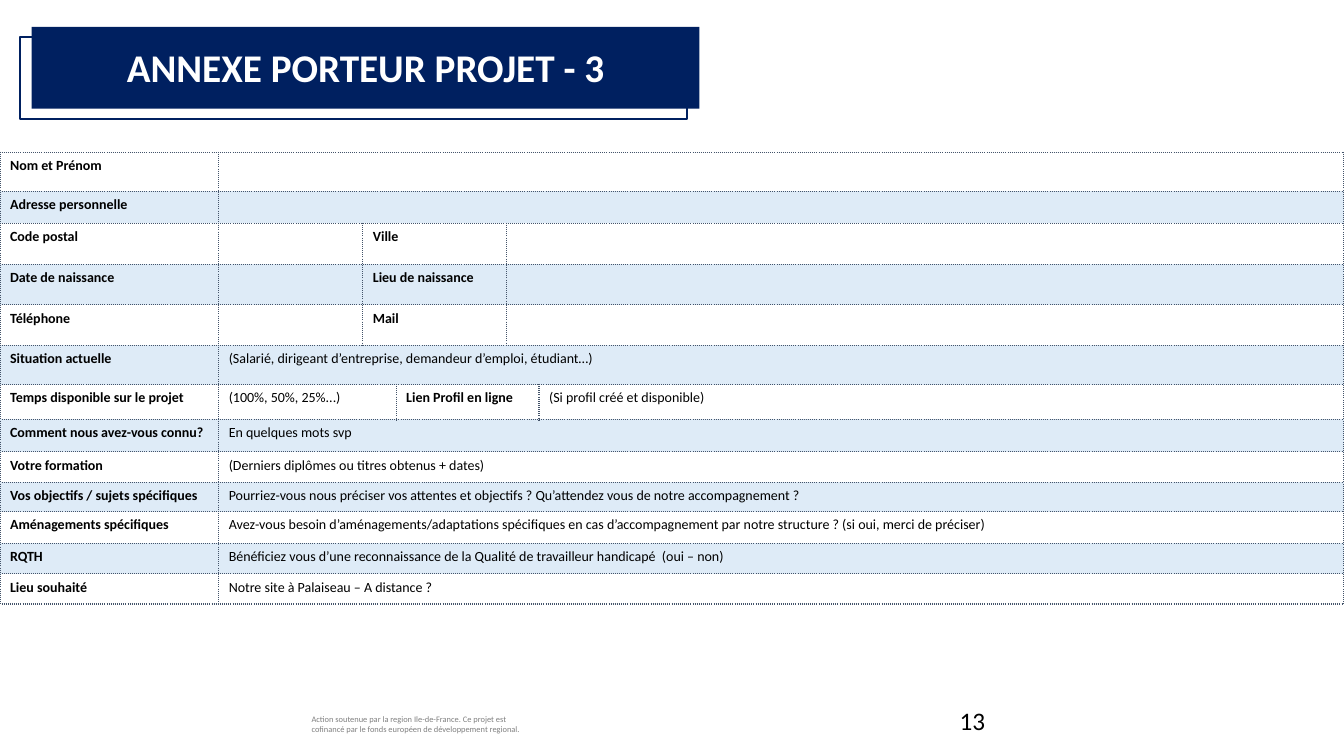
from lxml import etree
from pptx import Presentation
from pptx.dml.color import RGBColor
from pptx.enum import shapes, text
from pptx.oxml import ns
from pptx.util import Cm, Pt

NAVY = RGBColor(0x00, 0x20, 0x60)
PALE_BLUE = RGBColor(0xDE, 0xEB, 0xF7)
BORDER = RGBColor(0x44, 0x54, 0x6A)
GREY = RGBColor(0x80, 0x80, 0x80)
BLACK = RGBColor(0, 0, 0)
WHITE = RGBColor(255, 255, 255)

TITLE = "ANNEXE PORTEUR PROJET - 3"
FOOTER = ("Action soutenue par la region Ile-de-France. Ce projet est cofinancé "
          "par le fonds européen de développement regional.")
PAGE_NUMBER = "13"

WIDE = (1, 5)
PAIRS = (1, 1, 2, 2)
PROFILE = (1, 2, 2, 1)
FORM = [
    (0.98, WIDE, ["Nom et Prénom", ""]),
    (0.81, WIDE, ["Adresse personnelle", ""]),
    (1.03, PAIRS, ["Code postal", "", "Ville", ""]),
    (1.02, PAIRS, ["Date de naissance", "", "Lieu de naissance", ""]),
    (1.02, PAIRS, ["Téléphone", "", "Mail", ""]),
    (0.99, WIDE, ["Situation actuelle",
                  "(Salarié, dirigeant d’entreprise, demandeur d’emploi, étudiant…)"]),
    (0.88, PROFILE, ["Temps disponible sur le projet", "(100%, 50%, 25%...)",
                     "Lien Profil en ligne", "(Si profil créé et disponible)"]),
    (0.81, WIDE, ["Comment nous avez-vous connu?", "En quelques mots svp"]),
    (0.77, WIDE, ["Votre formation", "(Derniers diplômes ou titres obtenus + dates)"]),
    (0.74, WIDE, ["Vos objectifs / sujets spécifiques",
                  "Pourriez-vous nous préciser vos attentes et objectifs ? "
                  "Qu’attendez vous de notre accompagnement ?"]),
    (0.8, WIDE, ["Aménagements spécifiques",
                 "Avez-vous besoin d’aménagements/adaptations spécifiques en cas "
                 "d’accompagnement par notre structure ? (si oui, merci de préciser)"]),
    (0.77, WIDE, ["RQTH", "Bénéficiez vous d’une reconnaissance de la Qualité "
                          "de travailleur handicapé  (oui – non)"]),
    (0.76, WIDE, ["Lieu souhaité", "Notre site à Palaiseau – A distance ?"]),
]
COLUMNS = [5.51, 3.63, 0.84, 2.79, 0.81, 20.28]


def style(para, size, color, bold=False):
    para.font.name = "Calibri"
    para.font.size = Pt(size)
    para.font.color.rgb = color
    para.font.bold = bold


def add_text(page, left, top, width, height, words, size, color):
    box = page.shapes.add_textbox(Cm(left), Cm(top), Cm(width), Cm(height))
    box.text_frame.word_wrap = True
    box.text_frame.text = words
    style(box.text_frame.paragraphs[0], size, color)


def add_panel(page, left, top):
    panel = page.shapes.add_shape(shapes.MSO_SHAPE.RECTANGLE,
                                  Cm(left), Cm(top), Cm(16.82), Cm(2.06))
    panel.shadow.inherit = False
    return panel


def add_borders(cell):
    properties = cell._tc.get_or_add_tcPr()
    for side in ("lnL", "lnR", "lnT", "lnB"):
        line = etree.SubElement(properties, ns.qn(f"a:{side}"), w=str(Pt(1)))
        fill = etree.SubElement(line, ns.qn("a:solidFill"))
        etree.SubElement(fill, ns.qn("a:srgbClr"), val=str(BORDER))
        etree.SubElement(line, ns.qn("a:prstDash"), val="sysDot")


def add_form(page):
    heights = [height for height, spans, words in FORM]
    table = page.shapes.add_table(len(FORM), len(COLUMNS), 0, Cm(3.84),
                                  Cm(sum(COLUMNS)), Cm(sum(heights))).table
    table.first_row = table.horz_banding = False
    for column, width in zip(table.columns, COLUMNS):
        column.width = Cm(width)
    for row, (height, spans, words) in enumerate(FORM):
        table.rows[row].height = Cm(height)
        for column in range(len(COLUMNS)):
            cell = table.cell(row, column)
            add_borders(cell)
            if row % 2:
                cell.fill.solid()
                cell.fill.fore_color.rgb = PALE_BLUE
            else:
                cell.fill.background()
            cell.margin_top = cell.margin_bottom = 0
        column = 0
        for order, (span, entry) in enumerate(zip(spans, words)):
            cell = table.cell(row, column)
            if span > 1:
                cell.merge(table.cell(row, column + span - 1))
            if entry:
                cell.margin_top = cell.margin_bottom = Cm(0.13)
                cell.text = entry
            style(cell.text_frame.paragraphs[0], 10, BLACK, order % 2 == 0)
            column += span


def add_title(page):
    frame = add_panel(page, 0.5, 0.94)
    frame.fill.background()
    frame.line.color.rgb = NAVY
    frame.line.width = Pt(1.5)
    banner = add_panel(page, 0.8, 0.68)
    banner.fill.solid()
    banner.fill.fore_color.rgb = NAVY
    banner.line.fill.background()
    title = page.shapes.title
    title.left, title.top, title.width, title.height = Cm(0.8), Cm(0.97), Cm(16.82), Cm(1.45)
    title.text_frame.text = TITLE
    title.text_frame.vertical_anchor = text.MSO_ANCHOR.MIDDLE
    title.text_frame.auto_size = text.MSO_AUTO_SIZE.NONE
    para = title.text_frame.paragraphs[0]
    para.alignment = text.PP_ALIGN.CENTER
    style(para, 28, WHITE, True)
    banner._element.addnext(title._element)


def main():
    deck = Presentation()
    deck.slide_width, deck.slide_height = Cm(33.86), Cm(19.05)
    page = deck.slides.add_slide(deck.slide_layouts[5])
    add_text(page, 7.6, 17.86, 6.05, 0.76, FOOTER, 6, GREY)
    add_form(page)
    add_title(page)
    add_text(page, 23.93, 17.65, 7.62, 1.02, PAGE_NUMBER, 18, BLACK)
    deck.save("out.pptx")


if __name__ == "__main__":
    main()
